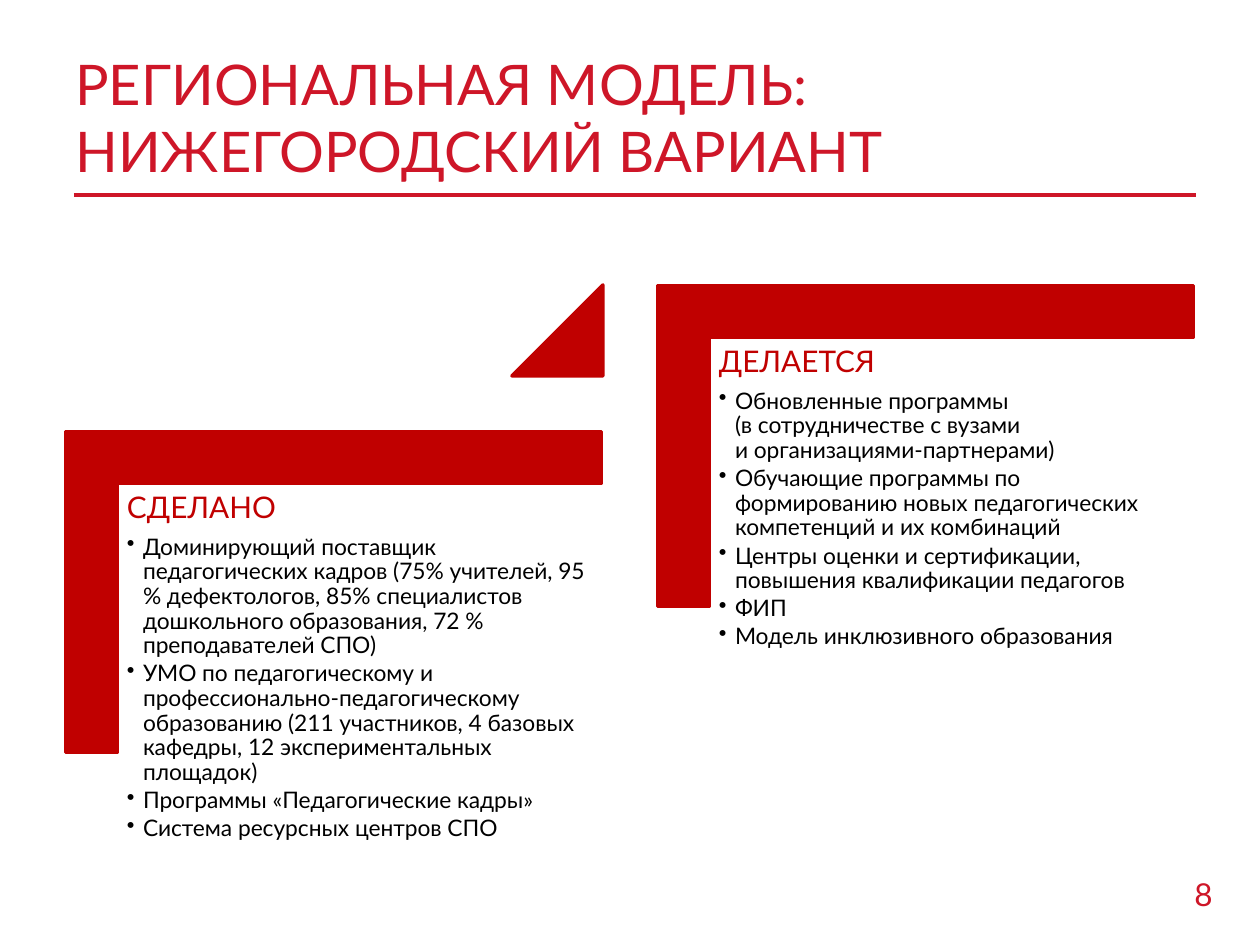
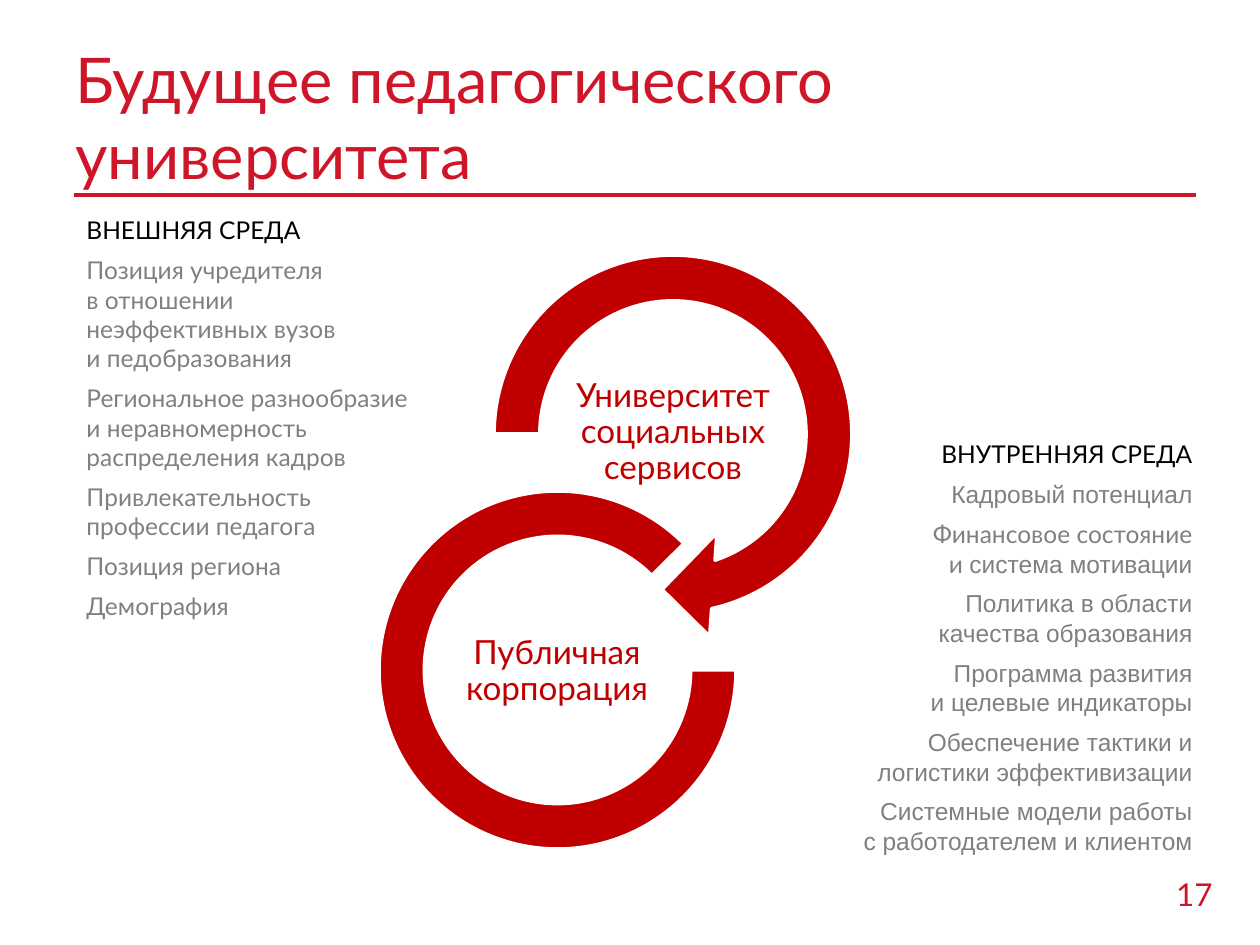
from lxml.etree import SubElement
from pptx import Presentation
from pptx.dml.color import RGBColor
from pptx.enum.shapes import MSO_CONNECTOR, MSO_SHAPE as PRESET
from pptx.enum.text import MSO_ANCHOR as ANCHOR, PP_ALIGN as ALIGN
from pptx.oxml.ns import qn
from pptx.util import Emu, Pt

PX = 914400 / 126
CRIMSON, RED, BLACK, GREY, WHITE = "CE1628", "C00000", "000000", "808080", "FFFFFF"
LATO, ARIAL = "Lato", "Arial"


def emu(*lengths):
    return [Emu(round(length * PX)) for length in lengths]


def color(hex_string):
    return RGBColor.from_string(hex_string)


def write(slide, frame, paragraphs, inset=None, anchor=ANCHOR.TOP, **layout):
    """Add a text box; a paragraph is (runs, size, colour, bulleted, space after), a run (text, font)."""
    text = slide.shapes.add_textbox(*emu(*frame)).text_frame
    text.word_wrap = True
    text.vertical_anchor = anchor
    if inset is not None:
        for side in ("left", "right", "top", "bottom"):
            setattr(text, f"margin_{side}", emu(inset)[0])
    for index, (runs, size, ink, bulleted, after) in enumerate(paragraphs):
        paragraph = text.paragraphs[0] if index == 0 else text.add_paragraph()
        for name, value in {**layout, "space_after": Pt(after)}.items():
            setattr(paragraph, name, value)
        if bulleted:
            properties = paragraph._p.get_or_add_pPr()
            hang = emu(16)[0]
            properties.set("marL", str(hang))
            properties.set("indent", str(-hang))
            SubElement(properties, qn("a:buChar")).set("char", "•")
        for words, face in runs:
            for number, line in enumerate(words.split("\n")):
                if number:
                    paragraph.add_line_break()
                run = paragraph.add_run()
                run.text = line
                for name, value in {"name": face, "size": Pt(size)}.items():
                    setattr(run.font, name, value)
                run.font.color.rgb = color(ink)


def draw(slide, preset, frame, adjustments, edge, rotation=0):
    """Add a red preset shape outlined in the edge colour."""
    shape = slide.shapes.add_shape(preset, *emu(*frame))
    shape.rotation = rotation
    shape.shadow.inherit = False
    shape.fill.solid()
    shape.fill.fore_color.rgb = color(RED)
    shape.line.color.rgb = color(edge)
    shape.line.width = Pt(2)
    for index, value in enumerate(adjustments):
        shape.adjustments[index] = value


deck = Presentation()
deck.slide_width, deck.slide_height = emu(1260, 945)

# Title, rule and page number of every slide
slides = []
for title, title_size, page in [
    ("РЕГИОНАЛЬНАЯ МОДЕЛЬ: НИЖЕГОРОДСКИЙ ВАРИАНТ", 32, "8"),
    ("Будущее педагогического университета", 36, "17"),
]:
    slide = deck.slides.add_slide(deck.slide_layouts[6])
    slides.append(slide)
    write(slide, (63, 38, 1134, 157), [([(title, LATO)], title_size, CRIMSON, False, 0)],
          anchor=ANCHOR.MIDDLE)
    rule = slide.shapes.add_connector(MSO_CONNECTOR.STRAIGHT, *emu(74, 195, 1196, 195))
    rule.line.color.rgb = color(CRIMSON)
    rule.line.width = Pt(2)
    SubElement(rule._element.spPr, qn("a:effectLst"))
    write(slide, (931, 869, 294, 50), [([(page, LATO)], 18, CRIMSON, False, 0)],
          anchor=ANCHOR.MIDDLE, alignment=ALIGN.RIGHT)
model, future = slides

# Two steps of the regional model
steps = [
    (173, 324, "СДЕЛАНО", [
        "Доминирующий поставщик педагогических кадров (75% учителей, 95 % дефектологов, "
        "85% специалистов дошкольного образования, 72 % преподавателей СПО)",
        "УМО по педагогическому и профессионально-педагогическому образованию "
        "(211 участников, 4 базовых кафедры, 12 экспериментальных площадок)",
        "Программы «Педагогические кадры»",
        "Система ресурсных центров СПО",
    ]),
    (765, 178, "ДЕЛАЕТСЯ", [
        "Обновленные программы\n(в сотрудничестве с вузами\nи организациями-партнерами)",
        "Обучающие программы по формированию новых педагогических компетенций и их комбинаций",
        "Центры оценки и сертификации, повышения квалификации педагогов",
        "ФИП",
        "Модель инклюзивного образования",
    ]),
]
for left, top, stage, results in steps:
    draw(model, PRESET.CORNER, (left, top, 321, 536), (0.161, 0.161), RED, rotation=90)
    write(model, (left - 55, top + 160, 484, 423),
          [([(stage, LATO)], 17, RED, False, 6)]
          + [([(result, LATO)], 13, BLACK, True, 2) for result in results],
          inset=9, line_spacing=0.9)
draw(model, PRESET.ISOSCELES_TRIANGLE, (512, 285, 91, 91), (1,), RED)

# Linked rings of the future university
rings = [
    (PRESET.CIRCULAR_ARROW, (465, 226, 416, 416), (0.11, 11.42, 45, 108, 0.125),
     (557, 375), "Университет социальных сервисов"),
    (PRESET.BLOCK_ARC, (379, 491, 357, 358), (0, 189, 0.127),
     (441, 614), "Публичная корпорация"),
]
for preset, frame, adjustments, corner, role in rings:
    draw(future, preset, frame, adjustments, WHITE)
    write(future, (*corner, 232, 116), [([(role, LATO)], 19, RED, False, 6)],
          inset=1, anchor=ANCHOR.MIDDLE, alignment=ALIGN.CENTER, line_spacing=0.9)

# Outer and inner environment
environments = [
    ((74, 209, 357, 422), ALIGN.LEFT, "ВНЕШНЯЯ СРЕДА", [
        [("Позиция учредителя\nв отношении\nнеэффективных вузов\nи педобразования", LATO)],
        [("Региональное разнообразие\nи неравномерность распределения кадров", LATO)],
        [("Привлекательность профессии педагога", LATO)],
        [("Позиция региона", LATO)],
        [("Демография", LATO)],
    ]),
    ((848, 433, 357, 432), ALIGN.RIGHT, "ВНУТРЕННЯЯ СРЕДА", [
        [("Кадровый потенциал", ARIAL)],
        [("Финансовое состояние\nи ", LATO), ("система мотивации", ARIAL)],
        [("Политика в области качества образования", ARIAL)],
        [("Программа развития\nи целевые индикаторы", ARIAL)],
        [("Обеспечение тактики и логистики эффективизации", ARIAL)],
        [("Системные модели работы\nс работодателем и клиентом", ARIAL)],
    ]),
]
for frame, side, heading, factors in environments:
    write(future, frame,
          [([(heading, LATO)], 14, BLACK, False, 6)]
          + [(factor, 14, GREY, False, 6) for factor in factors],
          alignment=side)

deck.save("out.pptx")
